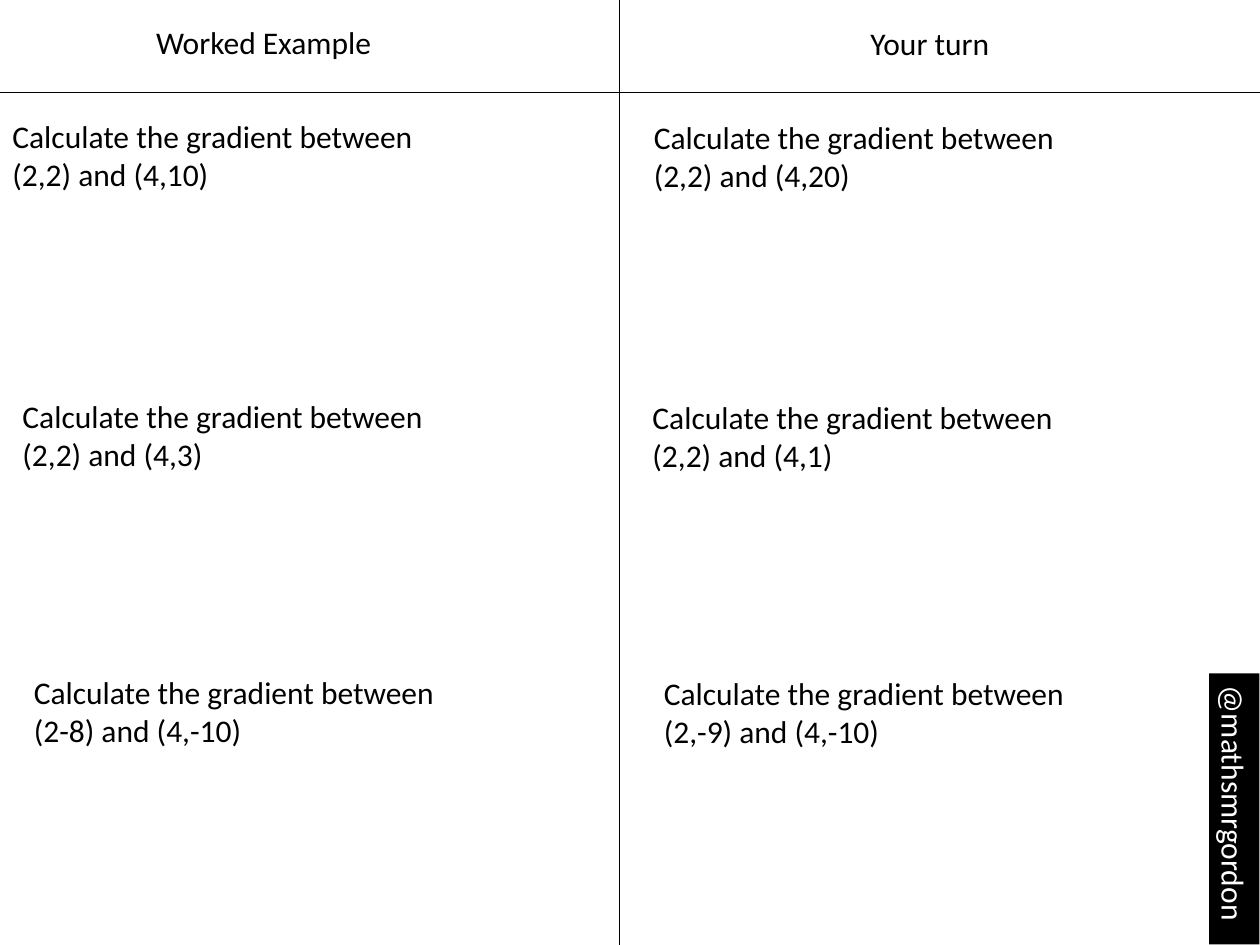
from lxml import etree
from pptx import Presentation
from pptx.dml.color import RGBColor
from pptx.enum.shapes import MSO_CONNECTOR, MSO_SHAPE
from pptx.enum.text import MSO_ANCHOR, MSO_AUTO_SIZE, PP_ALIGN
from pptx.oxml.ns import qn
from pptx.util import Inches, Pt

LINE = MSO_CONNECTOR.STRAIGHT
RECT = MSO_SHAPE.RECTANGLE
TOP = MSO_ANCHOR.TOP
LEFT = PP_ALIGN.LEFT
GROW = MSO_AUTO_SIZE.SHAPE_TO_FIT_TEXT

THEME = {
    "font": "Calibri",
    "size": Pt(18),
    "rule": Pt(0.5),
    "ink": RGBColor(0, 0, 0),
    "paper": RGBColor(255, 255, 255),
}

deck = Presentation()
deck.slide_width, deck.slide_height = Inches(10), Inches(7.5)
slide = deck.slides.add_slide(deck.slide_layouts[6])


def write(text, x, y, w, h, color=THEME["ink"], fill=None, turn=0):
    box = [Inches(v) for v in (x, y, w, h)]
    if fill is None:
        shape = slide.shapes.add_textbox(*box)
    else:
        shape = slide.shapes.add_shape(RECT, *box)
        shape.shadow.inherit = False
        shape.fill.solid()
        shape.fill.fore_color.rgb = fill
        shape.line.fill.background()
    shape.rotation = turn
    frame = shape.text_frame
    frame.word_wrap = True
    frame.auto_size = GROW
    frame.vertical_anchor = TOP
    frame.text = text
    for para in frame.paragraphs:
        para.alignment = LEFT
        para.font.name = THEME["font"]
        para.font.size = THEME["size"]
        para.font.color.rgb = color


for ends in [(4.92, 0, 4.92, 7.5), (0, 0.73, 10, 0.73)]:
    rule = slide.shapes.add_connector(LINE, *[Inches(v) for v in ends])
    rule.line.color.rgb = THEME["ink"]
    rule.line.width = THEME["rule"]
    etree.SubElement(rule.element.spPr, qn("a:effectLst"))

write("Worked Example", 1.14, 0.13, 3.78, 0.4)
write("Your turn", 6.81, 0.14, 3.78, 0.4)
write("@mathsmrgordon", 8.72, 6.22, 2.15, 0.4,
      color=THEME["paper"], fill=THEME["ink"], turn=90)

tasks = [
    (0.88, (0, "(2,2) and (4,10)"), (5.09, "(2,2) and (4,20)")),
    (3.1, (0.08, "(2,2) and (4,3)"), (5.08, "(2,2) and (4,1)")),
    (5.29, (0.17, "(2-8) and (4,-10)"), (5.17, "(2,-9) and (4,-10)")),
]
for top, *pair in tasks:
    for col, (left, points) in enumerate(pair):
        write("Calculate the gradient between\n" + points,
              left, top + 0.01 * col, 4.92, 0.71)

deck.save("out.pptx")
